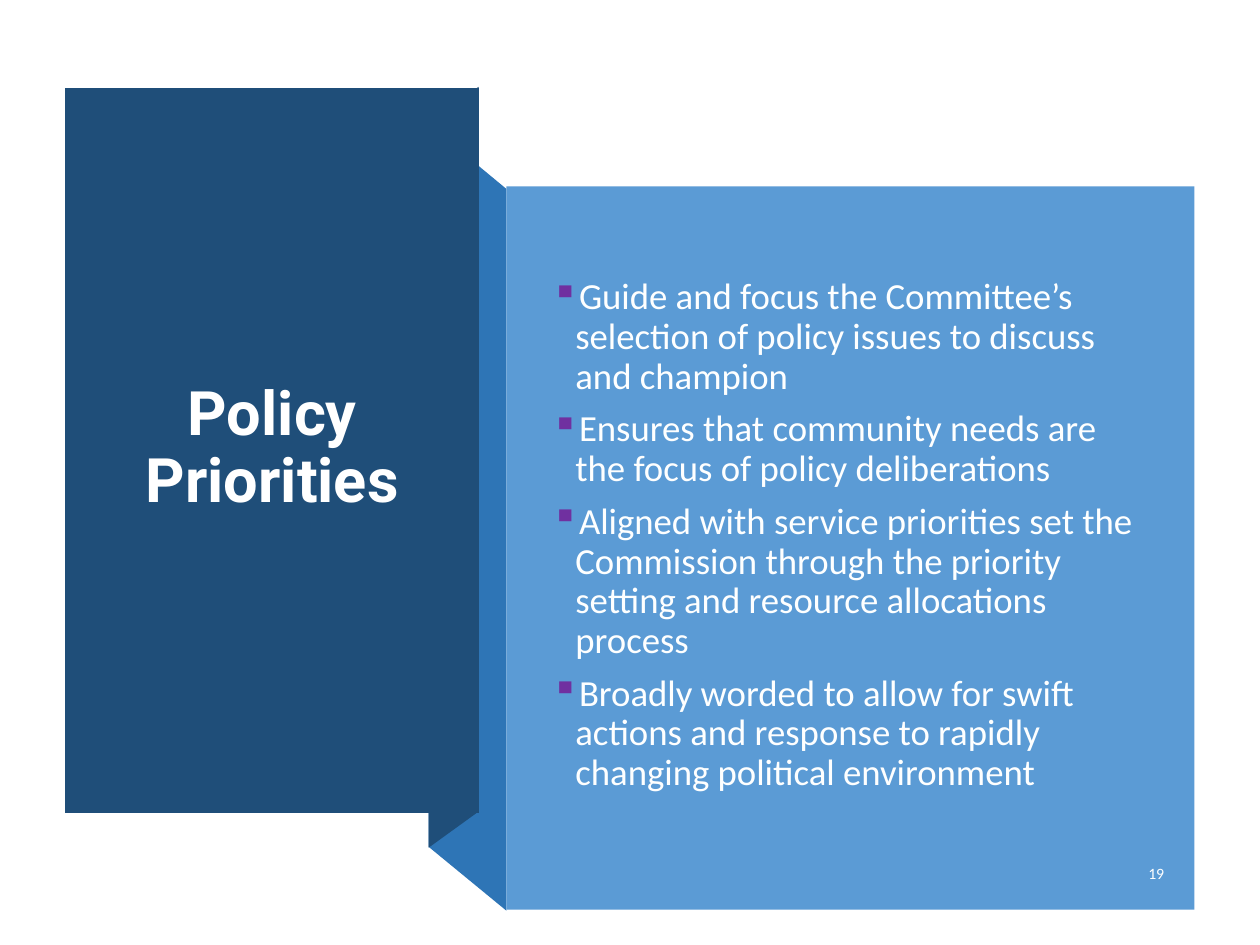
from typing import NamedTuple

from lxml.etree import SubElement
from pptx import Presentation
from pptx.dml.color import RGBColor
from pptx.enum.shapes import MSO_SHAPE
from pptx.enum.text import MSO_ANCHOR, PP_ALIGN
from pptx.oxml.ns import qn
from pptx.util import Cm, Pt

NAVY = RGBColor(0x1F, 0x4E, 0x79)
MID_BLUE = RGBColor(0x2E, 0x75, 0xB6)
LIGHT_BLUE = RGBColor(0x5B, 0x9B, 0xD5)
WHITE = RGBColor(0xFF, 0xFF, 0xFF)
OFF_WHITE = RGBColor(0xFE, 0xFF, 0xFF)
PURPLE = RGBColor(0x70, 0x30, 0xA0)

BULLET_INDENT = Cm(0.48)


class Box(NamedTuple):
    left: float
    top: float
    width: float
    height: float


class Panel(NamedTuple):
    """A flat face of the folded ribbon, with its corners in centimetres."""
    corners: list[tuple[float, float]]
    fill: RGBColor


RIBBON = [
    Panel([(10.21, 18.36), (8.64, 17.07), (8.64, 2.51), (10.21, 3.81)], MID_BLUE),
    Panel([(9.65, 16.36), (8.64, 17.09), (8.64, 2.49), (9.65, 1.75)], NAVY),
    Panel([(1.32, 1.78), (9.65, 1.78), (9.65, 16.38), (1.32, 16.38)], NAVY),
]
CONTENT_PANEL = Box(10.21, 3.76, 13.87, 14.58)
TITLE_BOX = Box(1.96, 2.72, 7.06, 12.67)
PRIORITIES_BOX = Box(10.87, 4.78, 12.4, 12.04)
PAGE_NUMBER_BOX = Box(22.3, 17.15, 1.42, 0.89)

PRIORITIES = [
    "Guide and focus the Committee’s selection of policy issues to discuss and champion",
    "Ensures that community needs are the focus of policy deliberations",
    "Aligned with service priorities set the Commission through the priority setting "
    "and resource allocations process",
    "Broadly worded to allow for swift actions and response to rapidly changing "
    "political environment",
]


def paint(shape, fill: RGBColor) -> None:
    shape.shadow.inherit = False
    shape.fill.solid()
    shape.fill.fore_color.rgb = fill
    shape.line.fill.background()


def draw_panel(slide, panel: Panel) -> None:
    start, *others = [(Cm(x), Cm(y)) for x, y in panel.corners]
    outline = slide.shapes.build_freeform(*start)
    outline.add_line_segments(others, close=True)
    paint(outline.convert_to_shape(), panel.fill)


def add_bullet(paragraph, color: RGBColor) -> None:
    props = paragraph._p.get_or_add_pPr()
    props.set("marL", str(BULLET_INDENT))
    props.set("indent", str(-BULLET_INDENT))
    bullet_color = SubElement(props, qn("a:buClr"))
    SubElement(bullet_color, qn("a:srgbClr"), val=str(color))
    SubElement(props, qn("a:buChar"), char="▪")


def add_text(slide, box: Box, lines: list[str], *, size: float, color: RGBColor,
             font: str = "Calibri", bold: bool = False, align=PP_ALIGN.LEFT,
             line_spacing: float = 1.0, before: float = 0, after: float = 0,
             bullet: RGBColor | None = None) -> None:
    frame = slide.shapes.add_textbox(*map(Cm, box)).text_frame
    frame.word_wrap = True
    frame.vertical_anchor = MSO_ANCHOR.MIDDLE
    for index, line in enumerate(lines):
        paragraph = frame.add_paragraph() if index else frame.paragraphs[0]
        paragraph.alignment = align
        paragraph.line_spacing = line_spacing
        paragraph.space_before = Pt(before)
        paragraph.space_after = Pt(after)
        if bullet is not None:
            add_bullet(paragraph, bullet)
        run = paragraph.add_run()
        run.text = line
        run.font.name = font
        run.font.size = Pt(size)
        run.font.bold = bold
        run.font.color.rgb = color


def main() -> None:
    deck = Presentation()
    deck.slide_width, deck.slide_height = Cm(25.4), Cm(19.05)
    slide = deck.slides.add_slide(deck.slide_layouts[6])

    for panel in RIBBON:
        draw_panel(slide, panel)
    add_text(slide, TITLE_BOX, ["Policy Priorities"], size=35, color=WHITE,
             font="Roboto", bold=True, align=PP_ALIGN.CENTER, line_spacing=0.9)

    content = slide.shapes.add_shape(MSO_SHAPE.RECTANGLE, *map(Cm, CONTENT_PANEL))
    paint(content, LIGHT_BLUE)
    add_text(slide, PRIORITIES_BOX, PRIORITIES, size=21, color=OFF_WHITE,
             line_spacing=0.9, before=7.5, bullet=PURPLE)
    add_text(slide, PAGE_NUMBER_BOX, ["19"], size=9, color=WHITE,
             align=PP_ALIGN.RIGHT, after=6)

    deck.save("out.pptx")


if __name__ == "__main__":
    main()
